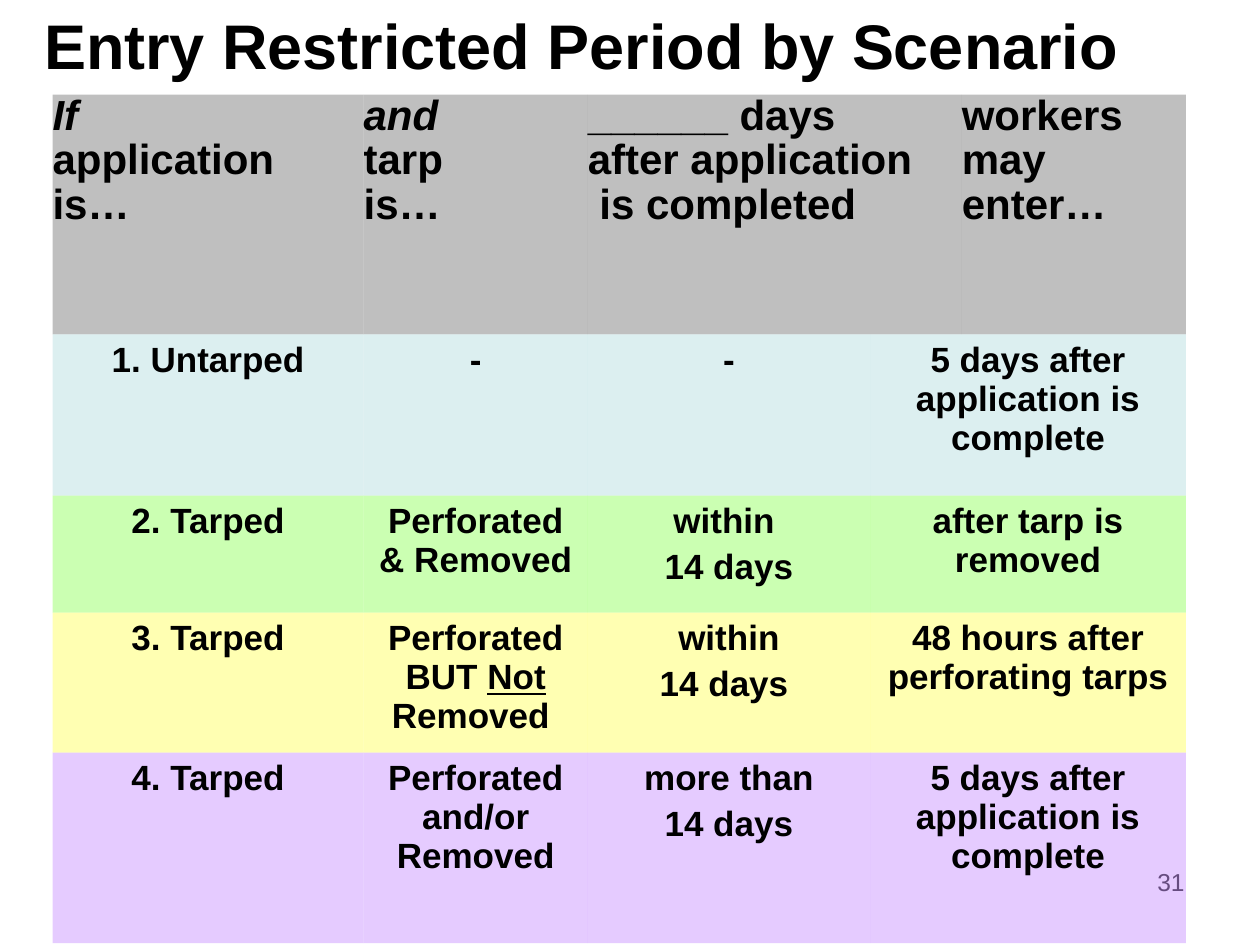
from lxml import etree
from pptx import Presentation
from pptx.dml.color import RGBColor
from pptx.enum.text import PP_ALIGN
from pptx.oxml.ns import qn
from pptx.util import Cm, Pt

LEFT, MID, RIGHT = PP_ALIGN.LEFT, PP_ALIGN.CENTER, PP_ALIGN.RIGHT
FONT, BLACK = "Arial", "000000"
PLAIN = "{2D5ABB26-0587-4C30-8999-92F81FD0307C}"  # no style, no grid

# Content: text between bars is italic in the head row, underlined below it
TITLE = "Entry Restricted Period by Scenario"
PAGE = "31"
HEAD = ["|If|\napplication\nis…", "|and|\ntarp\nis…",
        "______ days\nafter application\n is completed", "workers\nmay\nenter…"]
BODY = [
    ["1. Untarped", "-", "-", "5 days after application is complete"],
    ["2. Tarped", "Perforated & Removed ", "within \n14 days",
     "after tarp is removed"],
    ["3. Tarped", "Perforated BUT |Not| Removed ", "within\n14 days ",
     "48 hours after perforating tarps"],
    ["4. Tarped", "Perforated and/or Removed", "more than\n14 days",
     "5 days after application is complete"],
]
FILLS = ["808080", "BBE0E3", "99FF66", "FFFF66", "CC99FF"]
COLS = [6.27, 4.52, 5.69, 1.85, 4.52]
ROWS = [4.83, 3.25, 2.36, 2.82, 3.84]
HEAD_AT, BODY_AT = [0, 1, 2, 4], [0, 1, 2, 3]  # grid column of each cell


def color(code):
    return RGBColor.from_string(code)


def style(run, size, bold=True):
    font = run.font
    font.name, font.size, font.bold = FONT, Pt(size), bold
    font.color.rgb = color(BLACK)


def add_box(slide, text, place, size, align, bold):
    frame = slide.shapes.add_textbox(*map(Cm, place)).text_frame
    frame.word_wrap = True
    frame.text = text
    para = frame.paragraphs[0]
    para.alignment = align
    style(para.runs[0], size, bold)


def tint(cell, code):
    """Fill a cell at half opacity."""
    cell.fill.solid()
    cell.fill.fore_color.rgb = color(code)
    for node in cell._tc.iter(qn("a:srgbClr")):
        etree.SubElement(node, qn("a:alpha")).set("val", "50000")


def write(cell, text, head):
    frame = cell.text_frame
    if head:
        cell.margin_left = cell.margin_right = 0
        cell.margin_top = cell.margin_bottom = 0
    for i, line in enumerate(text.split("\n")):
        para = frame.add_paragraph() if i else frame.paragraphs[0]
        para.alignment = LEFT if head else MID
        if head:
            para.line_spacing = 0.95
        else:
            para.space_before = Pt(4)
        for j, part in enumerate(line.split("|")):
            if not part:
                continue
            run = para.add_run()
            run.text = part
            style(run, 24 if head else 20)
            if j % 2:
                if head:
                    run.font.italic = True
                else:
                    run.font.underline = True


deck = Presentation()
deck.slide_width, deck.slide_height = Cm(25.4), Cm(19.05)
slide = deck.slides.add_slide(deck.slide_layouts[6])

# Page number lies behind the table
add_box(slide, PAGE, (18.21, 17.35, 5.92, 1.32), 14, RIGHT, False)
add_box(slide, TITLE, (0.64, 0, 23.7, 1.78), 36, LEFT, True)

# Table
table = slide.shapes.add_table(len(ROWS), len(COLS), Cm(1.06), Cm(1.91),
                               Cm(sum(COLS)), Cm(sum(ROWS))).table
table.first_row = table.horz_banding = False
table._tbl.tblPr.find(qn("a:tableStyleId")).text = PLAIN
for col, width in zip(table.columns, COLS):
    col.width = Cm(width)
for row, height in zip(table.rows, ROWS):
    row.height = Cm(height)

for r, (texts, fill) in enumerate(zip([HEAD] + BODY, FILLS)):
    head = r == 0
    first = 2 if head else 3
    table.cell(r, first).merge(table.cell(r, first + 1))
    for c in range(len(COLS)):
        tint(table.cell(r, c), fill)
    for c, text in zip(HEAD_AT if head else BODY_AT, texts):
        write(table.cell(r, c), text, head)

deck.save("out.pptx")
